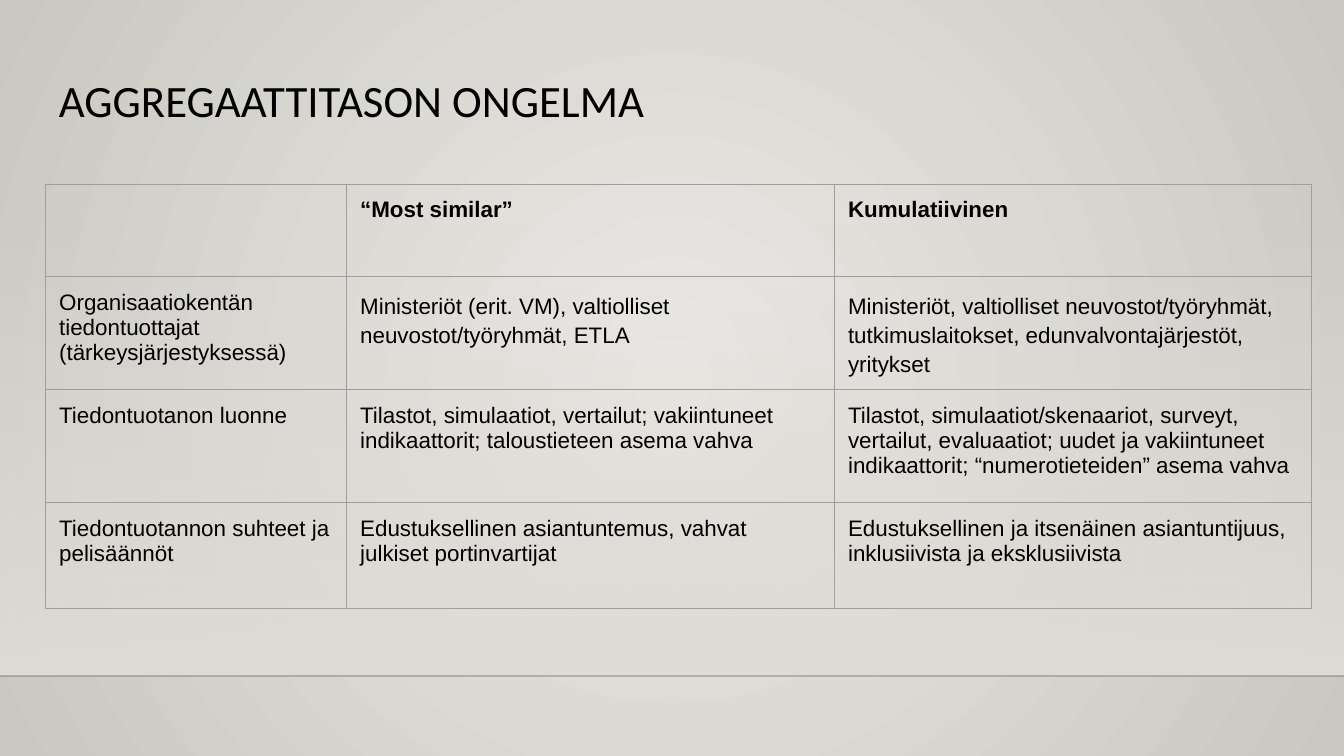
from dataclasses import dataclass

from lxml import etree
from pptx import Presentation
from pptx.dml.color import RGBColor
from pptx.enum.shapes import MSO_CONNECTOR, MSO_SHAPE
from pptx.enum.text import MSO_ANCHOR
from pptx.oxml.ns import qn
from pptx.util import Inches, Pt

RECTANGLE = MSO_SHAPE.RECTANGLE
STRAIGHT = MSO_CONNECTOR.STRAIGHT
TOP = MSO_ANCHOR.TOP

WIDTH = 10
HEIGHT = WIDTH * 9 / 16
FLOOR_TOP, BAND_HEIGHT = 5.03, 3.37
MARGIN, TIGHT_MARGIN = Inches(0.1), Inches(0.05)
BLACK, BORDER, BAND = "000000", "9E9E9E", "DFDBD5"


@dataclass
class TextStyle:
    font: str
    size: float
    bold: bool = False
    line_spacing: float | None = None


TITLE = TextStyle("Calibri", 24, line_spacing=0.9)
HEADER = TextStyle("Arial", 12, bold=True)
BODY = TextStyle("Arial", 12)
LOOSE = TextStyle("Arial", 12, line_spacing=1.15)


@dataclass
class TableRow:
    height: float
    texts: tuple[str, str, str]
    styles: tuple[TextStyle, TextStyle, TextStyle] = (BODY, BODY, BODY)


COLUMN_WIDTHS = (2.24, 3.63, 3.55)
ROWS = (
    TableRow(0.69, ("", "“Most similar”", "Kumulatiivinen"), (HEADER,) * 3),
    TableRow(0.84, (
        "Organisaatiokentän tiedontuottajat (tärkeysjärjestyksessä)",
        "Ministeriöt (erit. VM), valtiolliset neuvostot/työryhmät, ETLA",
        "Ministeriöt, valtiolliset neuvostot/työryhmät, tutkimuslaitokset, "
        "edunvalvontajärjestöt, yritykset",
    ), (BODY, LOOSE, LOOSE)),
    TableRow(0.84, (
        "Tiedontuotanon luonne",
        "Tilastot, simulaatiot, vertailut; vakiintuneet indikaattorit; "
        "taloustieteen asema vahva",
        "Tilastot, simulaatiot/skenaariot, surveyt, vertailut, evaluaatiot; "
        "uudet ja vakiintuneet indikaattorit; “numerotieteiden” asema vahva",
    )),
    TableRow(0.79, (
        "Tiedontuotannon suhteet ja pelisäännöt",
        "Edustuksellinen asiantuntemus, vahvat julkiset portinvartijat",
        "Edustuksellinen ja itsenäinen asiantuntijuus, inklusiivista ja "
        "eksklusiivista",
    )),
)


def color(value: str) -> RGBColor:
    return RGBColor.from_string(value)


def set_alpha(color_element, percent: int) -> None:
    etree.SubElement(color_element, qn("a:alpha"), val=str(percent * 1000))


def set_gradient(fill, start: str, end: str) -> None:
    fill.gradient()
    for stop, position, value in zip(fill.gradient_stops, (0, 1), (start, end)):
        stop.position = position
        stop.color.rgb = color(value)


def write_text(text_frame, text: str, style: TextStyle) -> None:
    paragraph = text_frame.paragraphs[0]
    if style.line_spacing:
        paragraph.line_spacing = style.line_spacing
    if text:
        run = paragraph.add_run()
        run.text = text
        run.font.name = style.font
        run.font.size = Pt(style.size)
        run.font.bold = style.bold
        run.font.color.rgb = color(BLACK)
    # The paragraph end takes the text size too, so it cannot stretch a row
    etree.SubElement(paragraph._p, qn("a:endParaRPr"), sz=str(style.size * 100))


def set_margins(holder) -> None:
    holder.margin_left = holder.margin_right = MARGIN
    holder.margin_top = holder.margin_bottom = MARGIN


def add_borders(cell) -> None:
    properties = cell._tc.get_or_add_tcPr()
    for side in ("lnL", "lnR", "lnT", "lnB"):
        line = etree.SubElement(properties, qn(f"a:{side}"), w=str(Pt(0.75)))
        fill = etree.SubElement(line, qn("a:solidFill"))
        etree.SubElement(fill, qn("a:srgbClr"), val=BORDER)


def draw_background(slide) -> None:
    # Radial gradient, light in the middle
    fill = slide.background.fill
    set_gradient(fill, "ECEAE7", "CAC7C1")
    gradient = slide.background._cSld.find(".//" + qn("a:gradFill"))
    gradient.remove(gradient.find(qn("a:lin")))
    circle = etree.SubElement(gradient, qn("a:path"), path="circle")
    center = {side: "50000" for side in "ltrb"}
    etree.SubElement(circle, qn("a:fillToRect"), center)

    # Band that fades in towards the floor line
    band = slide.shapes.add_shape(
        RECTANGLE, 0, Inches(FLOOR_TOP - BAND_HEIGHT), Inches(WIDTH), Inches(BAND_HEIGHT))
    band.shadow.inherit = False
    band.line.fill.background()
    set_gradient(band.fill, BAND, BAND)
    band.fill.gradient_angle = 270
    set_alpha(band._element.spPr.find(".//" + qn("a:srgbClr")), 0)

    # Floor line
    floor = slide.shapes.add_connector(
        STRAIGHT, 0, Inches(FLOOR_TOP), Inches(WIDTH), Inches(FLOOR_TOP))
    floor.line.width = Pt(1)
    floor.line.color.rgb = color("000001")
    set_alpha(floor._element.spPr.find(".//" + qn("a:srgbClr")), 20)
    etree.SubElement(floor._element.spPr, qn("a:effectLst"))


def draw_title(slide, text: str) -> None:
    box = slide.shapes.add_textbox(Inches(0.34), Inches(0.49), Inches(9.32), Inches(0.63))
    frame = box.text_frame
    frame.word_wrap = True
    frame.vertical_anchor = TOP
    set_margins(frame)
    write_text(frame, text, TITLE)


def draw_table(slide) -> None:
    table = slide.shapes.add_table(
        len(ROWS), len(COLUMN_WIDTHS), Inches(0.34), Inches(1.37),
        Inches(sum(COLUMN_WIDTHS)), Inches(sum(row.height for row in ROWS))).table
    table.first_row = False
    table.horz_banding = False
    for column, width in zip(table.columns, COLUMN_WIDTHS):
        column.width = Inches(width)
    for table_row, row in zip(table.rows, ROWS):
        table_row.height = Inches(row.height)
        for cell, text, style in zip(table_row.cells, row.texts, row.styles):
            set_margins(cell)
            if style is LOOSE:
                cell.margin_bottom = TIGHT_MARGIN
            cell.vertical_anchor = TOP
            add_borders(cell)
            cell.fill.background()
            write_text(cell.text_frame, text, style)


def main() -> None:
    presentation = Presentation()
    presentation.slide_width = Inches(WIDTH)
    presentation.slide_height = Inches(HEIGHT)
    slide = presentation.slides.add_slide(presentation.slide_layouts[6])
    draw_background(slide)
    draw_title(slide, "AGGREGAATTITASON ONGELMA")
    draw_table(slide)
    presentation.save("out.pptx")


if __name__ == "__main__":
    main()
